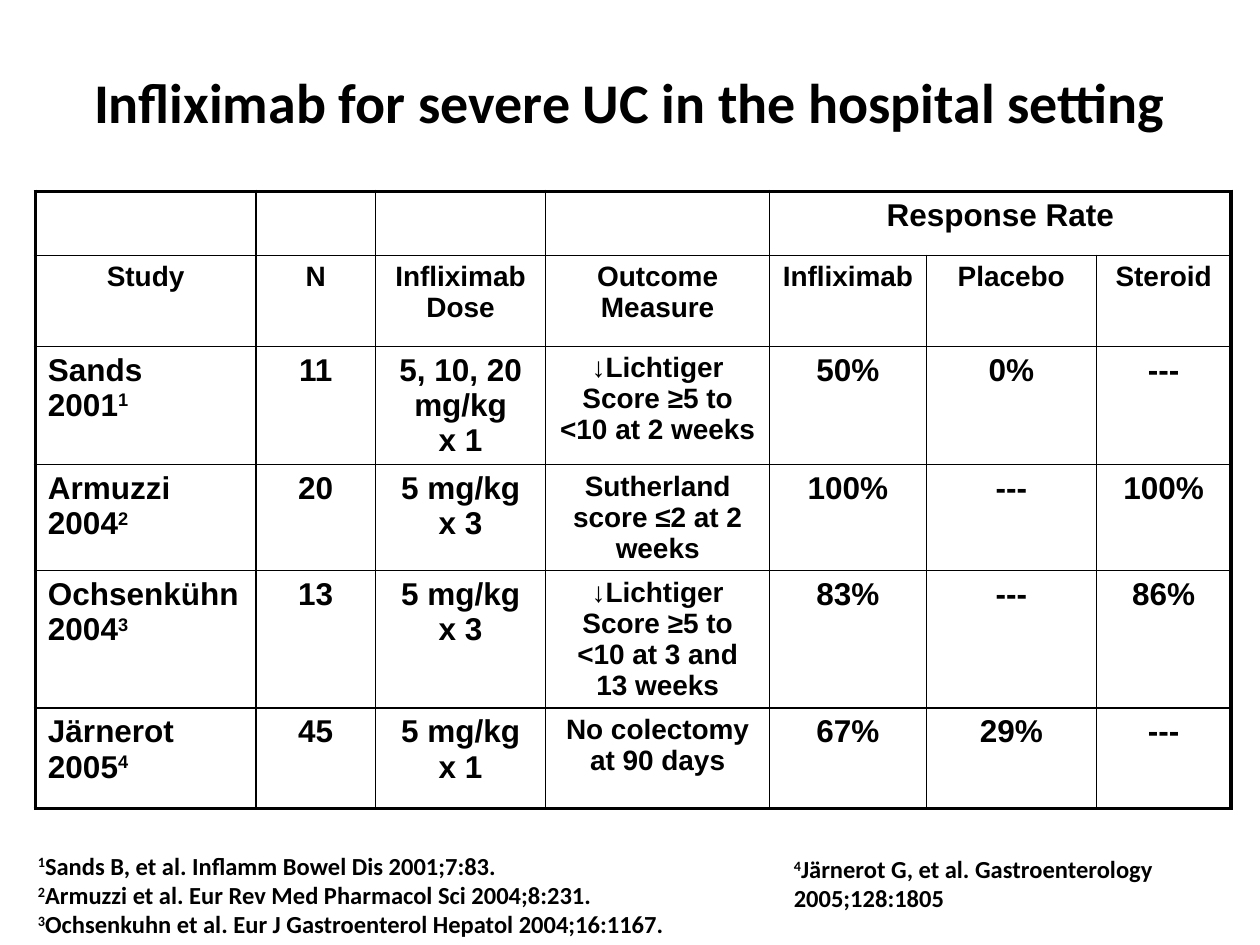
from dataclasses import dataclass

from lxml import etree
from pptx import Presentation
from pptx.dml.color import RGBColor
from pptx.enum import text as tx
from pptx.oxml import ns
from pptx.util import Pt

INK = {"text": "000000", "line": "000000"}
LEFT, MID = tx.PP_ALIGN.LEFT, tx.PP_ALIGN.CENTER


@dataclass
class Study:
    name: str
    note: str
    n: str
    dose: str
    measure: str
    rates: tuple[str, str, str]


@dataclass
class Refs:
    box: tuple[float, float, float, float]
    items: list[tuple[str, str]]


HEADS = ["Study", "N", "Infliximab Dose", "Outcome Measure",
         "Infliximab", "Placebo", "Steroid"]
STUDIES = [
    Study("Sands\v2001", "1", "11", "5, 10, 20 mg/kg\vx 1",
          "↓Lichtiger Score ≥5 to <10 at 2 weeks", ("50%", "0%", "---")),
    Study("Armuzzi 2004", "2", "20", "5 mg/kg x 3",
          "Sutherland score ≤2 at 2 weeks", ("100%", "---", "100%")),
    Study("Ochsenkühn 2004", "3", "13", "5 mg/kg x 3",
          "↓Lichtiger Score ≥5 to <10 at 3 and 13 weeks", ("83%", "---", "86%")),
    Study("Järnerot 2005", "4", "45", "5 mg/kg x 1",
          "No colectomy at 90 days", ("67%", "29%", "---")),
]
REFS = [
    Refs((14.5, 482.5, 463.5, 58), [
        ("1", "Sands B, et al. Inflamm Bowel Dis 2001;7:83."),
        ("2", "Armuzzi et al. Eur Rev Med Pharmacol Sci 2004;8:231."),
        ("3", "Ochsenkuhn et al. Eur J Gastroenterol Hepatol 2004;16:1167."),
    ]),
    Refs((446.5, 484.5, 258.5, 41), [
        ("4", "Järnerot G, et al. Gastroenterology 2005;128:1805"),
    ]),
]
COLS = [126, 68.4, 97.2, 128, 89.5, 97.2, 77]
ROWS = [36.5, 52, 67.5, 60.5, 78.5, 57.5]


def style(para, face: str, size: float, align=LEFT) -> None:
    para.alignment = align
    for run in para.runs:
        font = run.font
        font.name, font.size, font.bold = face, Pt(size), True
        font.color.rgb = RGBColor.from_string(INK["text"])


def raise_run(run) -> None:
    run._r.get_or_add_rPr().set("baseline", "30000")


def edge(cell, widths: dict[str, float]) -> None:
    props = cell._tc.get_or_add_tcPr()
    for i, (side, width) in enumerate(widths.items()):
        line = etree.Element(ns.qn(f"a:ln{side}"), w=str(int(Pt(width))))
        fill = etree.SubElement(line, ns.qn("a:solidFill"))
        etree.SubElement(fill, ns.qn("a:srgbClr"), val=INK["line"])
        props.insert(i, line)


def put(cell, words: str, size: float, align=MID, note: str = "") -> None:
    cell.text_frame.text = words
    para = cell.text_frame.paragraphs[0]
    if note:
        mark = para.add_run()
        mark.text = note
        raise_run(mark)
    style(para, "Arial", size, align)


def draw_table(slide) -> None:
    frame = slide.shapes.add_table(len(ROWS), len(COLS), Pt(20.2), Pt(109.4),
                                   Pt(sum(COLS)), Pt(sum(ROWS)))
    table = frame.table
    table.first_row = table.horz_banding = False
    for col, width in zip(table.columns, COLS):
        col.width = Pt(width)
    for row, height in zip(table.rows, ROWS):
        row.height = Pt(height)

    # Thick outer frame, thin inner grid
    for r in range(len(ROWS)):
        for c in range(len(COLS)):
            cell = table.cell(r, c)
            cell.fill.background()
            outer = {"L": c == 0, "R": c == len(COLS) - 1,
                     "T": r == 0, "B": r == len(ROWS) - 1}
            edge(cell, {side: 2.25 if out else 1 for side, out in outer.items()})

    # Header rows
    table.cell(0, 4).merge(table.cell(0, 6))
    for side in ("R",):
        line = table.cell(0, 4)._tc.tcPr.find(ns.qn(f"a:ln{side}"))
        line.set("w", str(int(Pt(2.25))))
    put(table.cell(0, 4), "Response Rate", 18)
    for c, head in enumerate(HEADS):
        put(table.cell(1, c), head, 16)

    # One row per study
    for r, study in enumerate(STUDIES, 2):
        put(table.cell(r, 0), study.name, 18, LEFT, study.note)
        put(table.cell(r, 1), study.n, 18)
        put(table.cell(r, 2), study.dose, 18)
        put(table.cell(r, 3), study.measure, 16)
        for c, rate in enumerate(study.rates, 4):
            put(table.cell(r, c), rate, 18)


def draw_refs(slide, refs: Refs) -> None:
    frame = slide.shapes.add_textbox(*map(Pt, refs.box)).text_frame
    frame.word_wrap = True
    frame.text = "\n".join(mark for mark, _ in refs.items)
    for para, (_, words) in zip(frame.paragraphs, refs.items):
        raise_run(para.runs[0])
        para.add_run().text = words
        style(para, "Calibri", 14)


def main() -> None:
    deck = Presentation()
    deck.slide_width, deck.slide_height = Pt(720), Pt(540)
    slide = deck.slides.add_slide(deck.slide_layouts[5])

    # Title
    title = slide.shapes.title
    title.left, title.top, title.width, title.height = map(Pt, (20, 12.5, 680, 90))
    title.text_frame.text = "Infliximab for severe UC in the hospital setting"
    title.text_frame.vertical_anchor = tx.MSO_ANCHOR.MIDDLE
    style(title.text_frame.paragraphs[0], "Calibri", 32, MID)

    # Study table and references
    draw_table(slide)
    for refs in REFS:
        draw_refs(slide, refs)
    deck.save("out.pptx")


if __name__ == "__main__":
    main()
